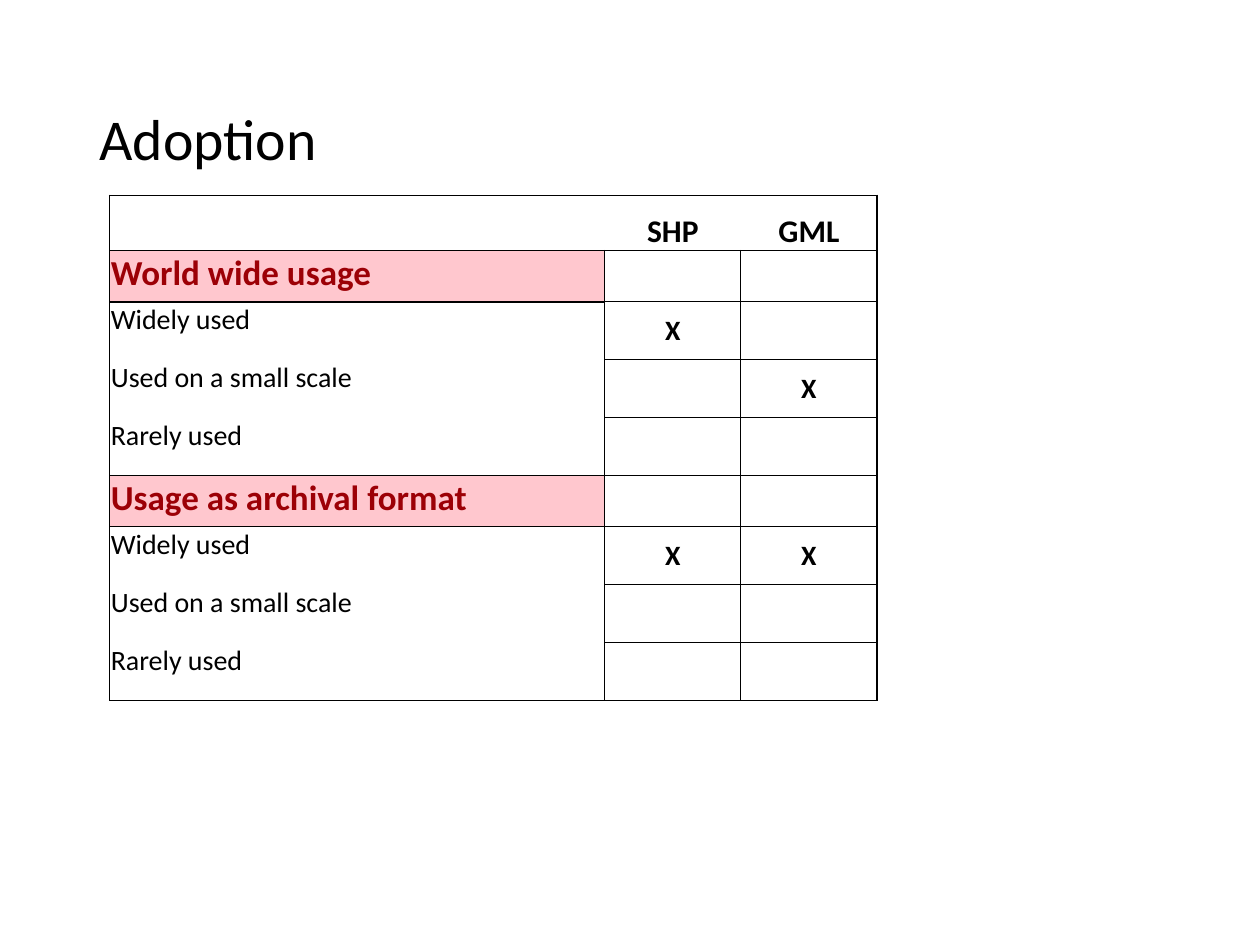
"""Build the Adoption slide comparing SHP and GML usage."""
from lxml.etree import fromstring
from pptx import Presentation
from pptx.dml.color import RGBColor
from pptx.enum.text import MSO_ANCHOR, PP_ALIGN
from pptx.oxml.ns import nsdecls, qn
from pptx.util import Inches, Pt


def color(value):
    """Return the colour of a hex string."""
    return RGBColor.from_string(value)


def set_borders(cell, widths):
    """Draw the given sides, keyed L, R, T and B, with widths in points."""
    sides = [side for side in "LRTB" if side in widths]
    for position, side in enumerate(sides):
        line = fromstring(
            f'<a:ln{side} {nsdecls("a")} w="{Pt(widths[side])}"><a:solidFill>'
            f'<a:srgbClr val="000000"/></a:solidFill></a:ln{side}>')
        cell._tc.get_or_add_tcPr().insert(position, line)


presentation = Presentation()
presentation.slide_width = Inches(10)
presentation.slide_height = Inches(7.5)
slide = presentation.slides.add_slide(presentation.slide_layouts[5])

title = slide.shapes.title
title.left, title.top = Inches(0.69), Inches(0.4)
title.width, title.height = Inches(8.62), Inches(1.45)
title.text_frame.text = "Adoption"
title.text_frame.vertical_anchor = MSO_ANCHOR.MIDDLE
paragraph = title.text_frame.paragraphs[0]
paragraph.alignment = PP_ALIGN.LEFT
paragraph.line_spacing = 0.9
paragraph.font.name = "Calibri"
paragraph.font.size = Pt(33)
paragraph.font.color.rgb = color("000000")

rows = [
    ("", "SHP", "GML"),
    ("World wide usage", "", ""),
    ("Widely used", "X", ""),
    ("Used on a small scale", "", "X"),
    ("Rarely used", "", ""),
    ("Usage as archival format", "", ""),
    ("Widely used", "X", "X"),
    ("Used on a small scale", "", ""),
    ("Rarely used", "", ""),
]
section_rows = (1, 5)
last_rows = (4, 8)
column_widths = [3.93] + [1.08] * 4
row_heights = [0.44, 0.38] + [0.46] * 3 + [0.4] + [0.46] * 3

frame = slide.shapes.add_table(
    len(rows), len(column_widths), Inches(0.87), Inches(1.55),
    Inches(sum(column_widths)), Inches(sum(row_heights)))
table = frame.table
table.first_row = False
table.horz_banding = False
no_style = "{2D5ABB26-0587-4C30-8999-92F81FD0307C}"
table._tbl.tblPr.find(qn("a:tableStyleId")).text = no_style
for column, width in zip(table.columns, column_widths):
    column.width = Inches(width)

for row_index, texts in enumerate(rows):
    table.rows[row_index].height = Inches(row_heights[row_index])
    is_header = row_index == 0
    is_section = row_index in section_rows
    top = 1 if row_index <= 1 else 0.5
    for column_index, text in enumerate(texts):
        cell = table.cell(row_index, column_index)
        is_label = column_index == 0
        cell.margin_left = cell.margin_right = cell.margin_top = Inches(0.01)
        cell.margin_bottom = 0
        cell.text_frame.text = text
        paragraph = cell.text_frame.paragraphs[0]
        font = paragraph.runs[0].font if text else paragraph.font
        font.name = "Calibri"
        font.size = Pt(18 if is_header else 20 if is_section and is_label else 16)
        font.bold = is_header or is_section or not is_label
        font.color.rgb = color("9C0006" if is_section and is_label else "000000")
        if not is_label:
            paragraph.alignment = PP_ALIGN.CENTER
            cell.vertical_anchor = MSO_ANCHOR.BOTTOM if is_header else MSO_ANCHOR.MIDDLE
        if is_section and is_label:
            cell.fill.solid()
            cell.fill.fore_color.rgb = color("FFC7CE")
        else:
            cell.fill.background()

        if is_header:
            borders = {"T": 1, "B": 1}
            if is_label:
                borders["L"] = 1
            elif column_index == 2:
                borders["R"] = 1
        else:
            borders = {"L": 0.5, "R": 1 if column_index == 2 else 0.5}
            if not is_label or is_section:
                borders["T"] = top
            if not is_label or row_index in last_rows:
                borders["B"] = 0.5
        set_borders(cell, borders)

presentation.save("out.pptx")
